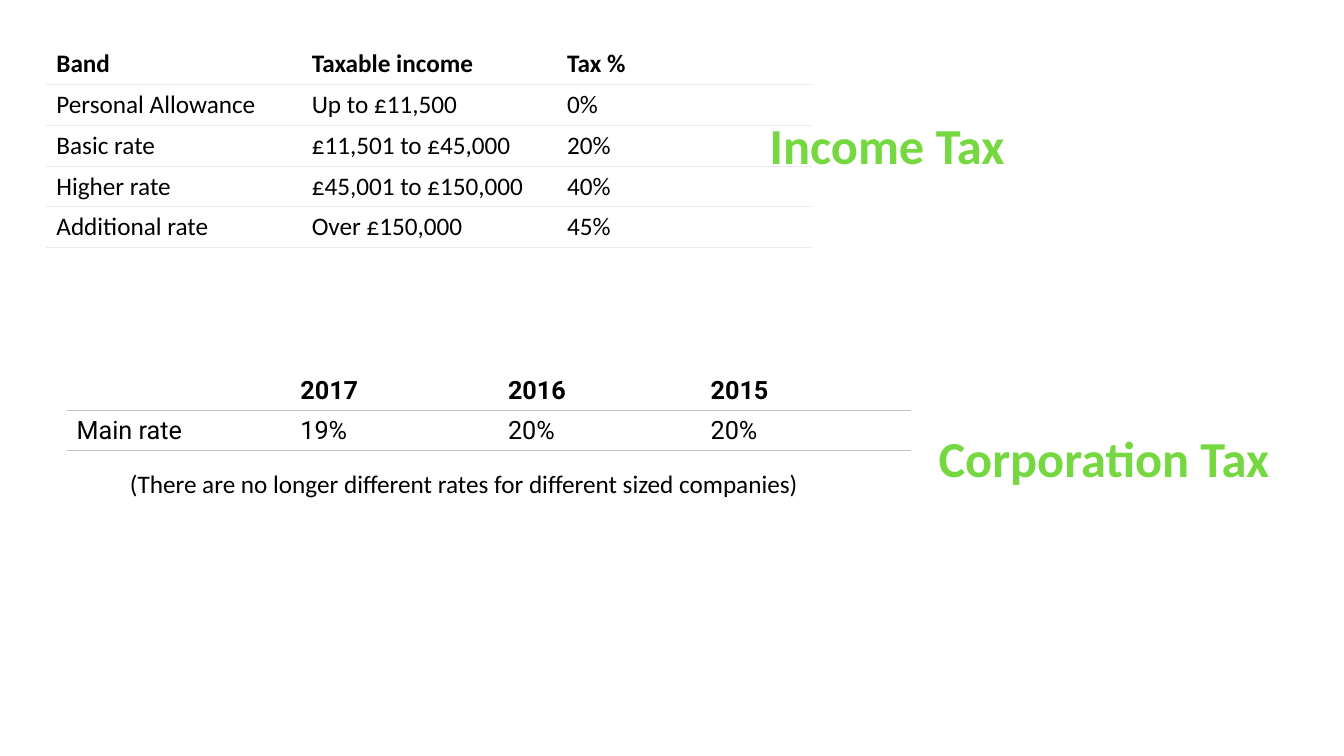
from dataclasses import dataclass

import lxml.etree
import pptx
import pptx.dml.color
import pptx.enum.text
import pptx.oxml
import pptx.oxml.ns
import pptx.shapes.base
import pptx.slide
import pptx.table
import pptx.text.text
import pptx.util

COLOURS = {
    "text": "000000",
    "paper": "FFFFFF",
    "income_rule": "EBEBEB",
    "corporation_rule": "BFC1C3",
    "heading_dark": "336F0A",
    "heading_green": "75D840",
    "heading_pale": "F2FBEE",
}
HEADING_STOPS = {0: "heading_dark", 78: "heading_green", 100: "heading_pale"}
SLIDE_WIDTH = pptx.util.Inches(13.33)
SLIDE_HEIGHT = pptx.util.Inches(7.5)
NO_STYLE = "{2D5ABB26-0587-4C30-8999-92F81FD0307C}"

BODY_FORMAT = {"name": "Calibri", "size": pptx.util.Pt(18), "bold": False}
HEADING_FORMAT = {"name": "Calibri", "size": pptx.util.Pt(36), "bold": True}
FRAME_FORMAT = {
    "word_wrap": False,
    "auto_size": pptx.enum.text.MSO_AUTO_SIZE.SHAPE_TO_FIT_TEXT,
    "vertical_anchor": pptx.enum.text.MSO_ANCHOR.TOP,
}
TABLE_FORMAT = {"first_row": False, "horz_banding": False}


@dataclass(frozen=True)
class Area:
    """Percentages of the slide's width and height."""

    left: float
    top: float
    width: float
    height: float

    def lengths(self) -> tuple[int, int, int, int]:
        return (
            across(self.left),
            down(self.top),
            across(self.width),
            down(self.height),
        )


@dataclass(frozen=True)
class RateTable:
    left: float
    top: float
    columns: tuple[float, ...]
    row_height: float
    rows: tuple[tuple[str, ...], ...]
    font_name: str
    rule: str
    anchor: pptx.enum.text.MSO_ANCHOR


@dataclass(frozen=True)
class Label:
    text: str
    area: Area
    is_heading: bool = True
    is_title: bool = False


RATE_TABLES = (
    RateTable(
        3.45, 5.73, (19,) * 3, 5.4,
        (
            ("Band", "Taxable income", "Tax %"),
            ("Personal Allowance", "Up to £11,500", "0%"),
            ("Basic rate", "£11,501 to £45,000", "20%"),
            ("Higher rate", "£45,001 to £150,000", "40%"),
            ("Additional rate", "Over £150,000", "45%"),
        ),
        "Calibri", "income_rule", pptx.enum.text.MSO_ANCHOR.MIDDLE,
    ),
    RateTable(
        4.95, 49.07, (16.65, 15.45, 15.08, 15.68), 5.25,
        (
            ("", "2017", "2016", "2015"),
            ("Main rate", "19%", "20%", "20%"),
        ),
        "Roboto", "corporation_rule", pptx.enum.text.MSO_ANCHOR.TOP,
    ),
)
LABELS = (
    Label("Corporation Tax", Area(68.94, 55.87, 26.41, 9.47)),
    Label("Income Tax", Area(56.41, 14.4, 19.2, 9.47), is_title=True),
    Label(
        "(There are no longer different rates for different sized companies)",
        Area(8.93, 61.33, 51.91, 5.33),
        is_heading=False,
    ),
)


def across(share: float) -> int:
    return round(SLIDE_WIDTH * share / 100)


def down(share: float) -> int:
    return round(SLIDE_HEIGHT * share / 100)


def colour(name: str) -> pptx.dml.color.RGBColor:
    return pptx.dml.color.RGBColor.from_string(COLOURS[name])


def apply_format(target: object, values: dict[str, object]) -> None:
    for name, value in values.items():
        setattr(target, name, value)


def add_child(parent: lxml.etree.ElementBase, tag: str, **attributes: str):
    return lxml.etree.SubElement(parent, pptx.oxml.ns.qn(tag), attributes)


def write(
    paragraph: pptx.text.text._Paragraph, text: str, values: dict[str, object]
) -> pptx.text.text.Font:
    run = paragraph.add_run()
    run.text = text
    apply_format(run.font, values)
    run.font.fill.solid()
    run.font.fill.fore_color.rgb = colour("text")
    return run.font


def fill_heading(font: pptx.text.text.Font) -> None:
    font.fill.gradient()
    font.fill.gradient_angle = 270
    stops = font._element.find(".//" + pptx.oxml.ns.qn("a:gsLst"))
    for stop in list(stops):
        stops.remove(stop)
    for position, name in HEADING_STOPS.items():
        stop = add_child(stops, "a:gs", pos=str(position * 1000))
        add_child(stop, "a:srgbClr", val=COLOURS[name])


def rule_below(cell: pptx.table._Cell, name: str) -> None:
    properties = cell._tc.get_or_add_tcPr()
    line = add_child(properties, "a:lnB", w=str(pptx.util.Pt(0.75)))
    add_child(add_child(line, "a:solidFill"), "a:srgbClr", val=COLOURS[name])
    properties.insert(0, line)


def draw_table(slide: pptx.slide.Slide, rates: RateTable) -> None:
    area = Area(
        rates.left, rates.top, sum(rates.columns), rates.row_height * len(rates.rows)
    )
    frame = slide.shapes.add_table(
        len(rates.rows), len(rates.columns), *area.lengths()
    )
    table = frame.table
    apply_format(table, TABLE_FORMAT)
    table._tbl.find(".//" + pptx.oxml.ns.qn("a:tableStyleId")).text = NO_STYLE
    for column, width in zip(table.columns, rates.columns):
        column.width = across(width)
    for row_index, texts in enumerate(rates.rows):
        table.rows[row_index].height = down(rates.row_height)
        values = BODY_FORMAT | {"name": rates.font_name, "bold": row_index == 0}
        for column_index, text in enumerate(texts):
            cell = table.cell(row_index, column_index)
            cell.vertical_anchor = rates.anchor
            cell.fill.solid()
            cell.fill.fore_color.rgb = colour("paper")
            write(cell.text_frame.paragraphs[0], text, values)
            rule_below(cell, rates.rule)


def draw_label(slide: pptx.slide.Slide, label: Label) -> None:
    lengths = label.area.lengths()
    if label.is_title:
        shape = slide.shapes.title
        apply_format(shape, dict(zip(("left", "top", "width", "height"), lengths)))
    else:
        shape = slide.shapes.add_textbox(*lengths)
    apply_format(shape.text_frame, FRAME_FORMAT)
    paragraph = shape.text_frame.paragraphs[0]
    values = HEADING_FORMAT if label.is_heading else BODY_FORMAT
    font = write(paragraph, label.text, values)
    if label.is_heading:
        paragraph.alignment = pptx.enum.text.PP_ALIGN.CENTER
        fill_heading(font)


def main() -> None:
    presentation = pptx.Presentation()
    apply_format(
        presentation, {"slide_width": SLIDE_WIDTH, "slide_height": SLIDE_HEIGHT}
    )
    slide = presentation.slides.add_slide(
        presentation.slide_layouts.get_by_name("Title Only")
    )
    for rates in RATE_TABLES:
        draw_table(slide, rates)
    title = slide.shapes.title._element
    title.getparent().append(title)
    for label in LABELS:
        draw_label(slide, label)
    presentation.save("out.pptx")


if __name__ == "__main__":
    main()
